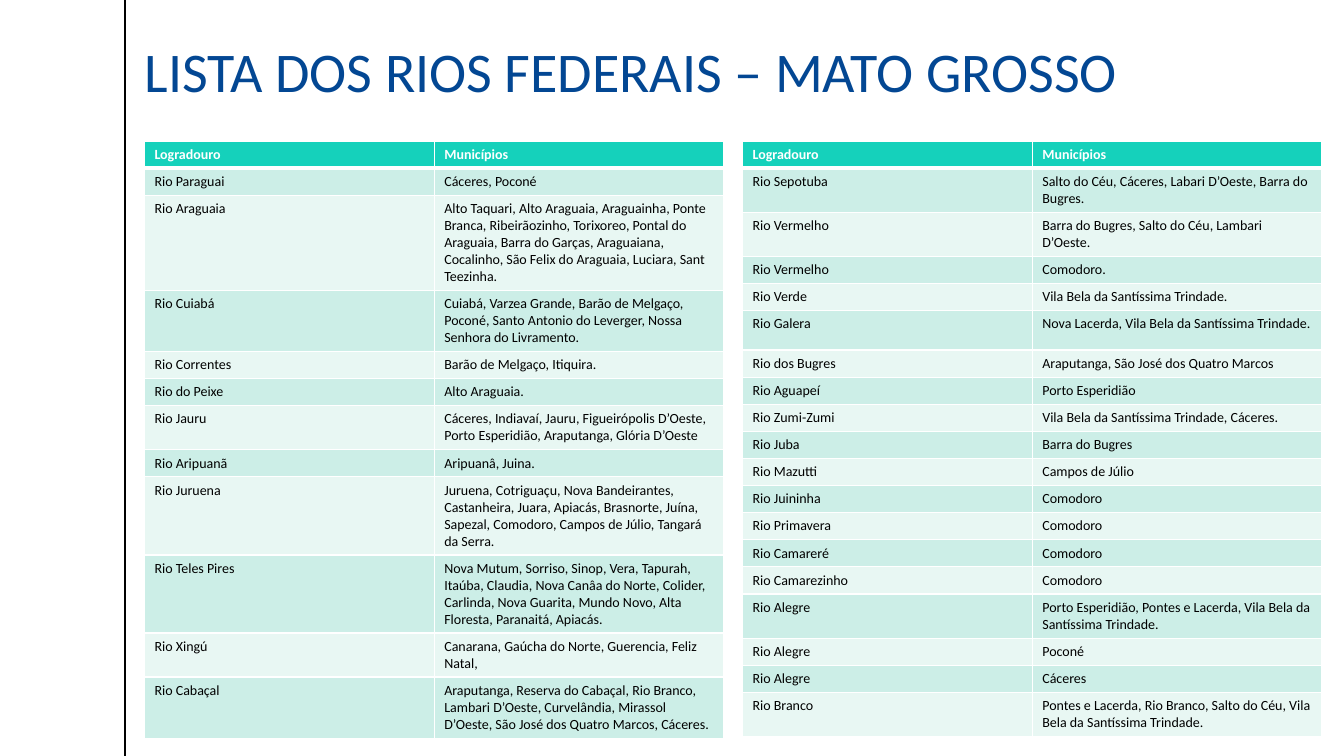
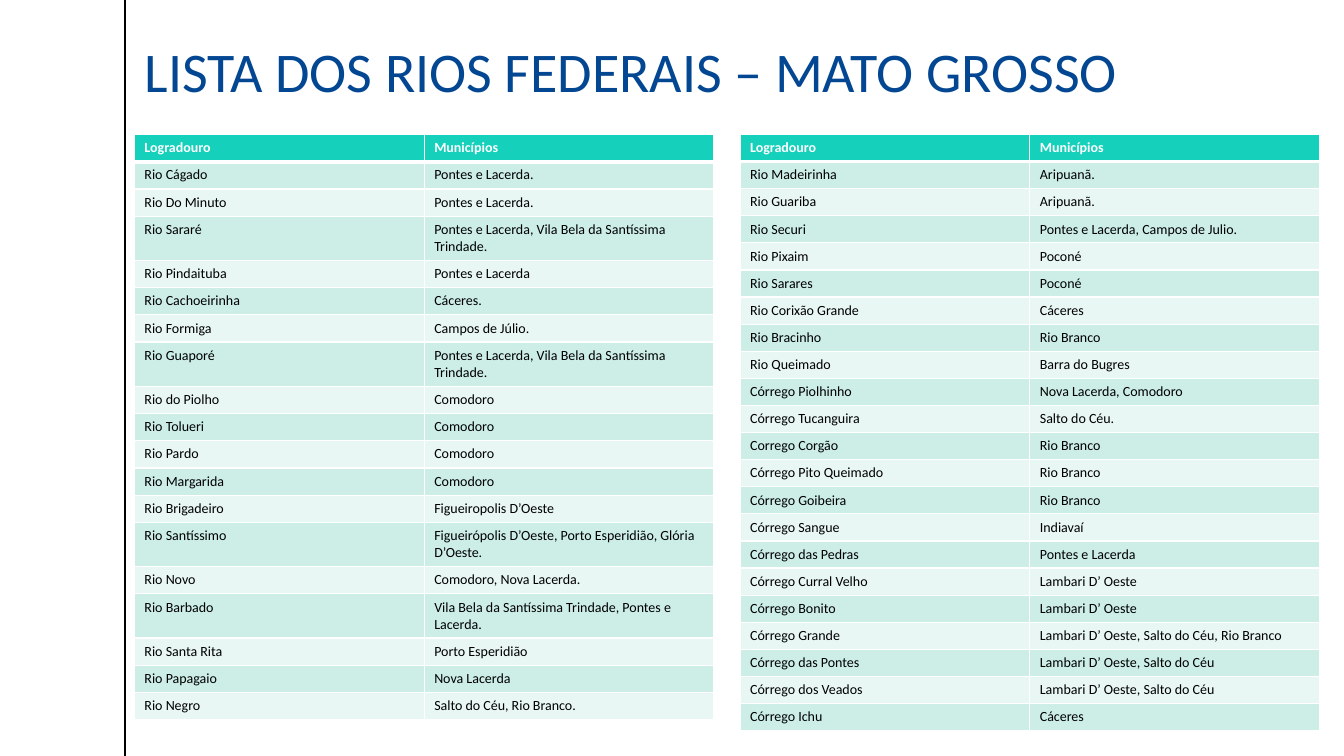
from dataclasses import dataclass
from typing import NamedTuple

from lxml import etree
from pptx import Presentation
from pptx.dml.color import RGBColor
from pptx.enum.shapes import MSO_CONNECTOR
from pptx.enum.text import MSO_ANCHOR, MSO_AUTO_SIZE, PP_ALIGN
from pptx.oxml.ns import qn
from pptx.util import Emu, Inches, Pt

STRAIGHT = MSO_CONNECTOR.STRAIGHT
MIDDLE = MSO_ANCHOR.MIDDLE
NO_FIT = MSO_AUTO_SIZE.NONE
LEFT = PP_ALIGN.LEFT

# Shared look: the slide is a grid of 160 columns by 90 rows
GRID_COLUMNS, GRID_ROWS = 160, 90
CELL = Inches(7.5) / GRID_ROWS
FONT = "Calibri"
COLORS = {
    "title": "034793",
    "header": "15D1BB",
    "odd": "CCEEE7",
    "even": "E8F7F3",
    "text": "000000",
    "white": "FFFFFF",
}
TITLE = "LISTA DOS RIOS FEDERAIS – MATO GROSSO"
HEADINGS = ("Logradouro", "Municípios")
COLUMN_WIDTH = 34.5
THIN, THICK = 1, 3


class River(NamedTuple):
    name: str
    towns: str
    height: float = 0


@dataclass
class RiverTable:
    column: float
    row: float
    rivers: list[River]
    row_height: float = 3.22


def grid(count: float) -> Emu:
    return Emu(round(count * CELL))


def color(name: str) -> RGBColor:
    return RGBColor.from_string(COLORS[name])


# Content
SLIDES = [
    [
        RiverTable(17.2, 16.8, [
            River("Rio Paraguai", "Cáceres, Poconé"),
            River("Rio Araguaia", "Alto Taquari, Alto Araguaia, Araguainha, Ponte Branca, "
                  "Ribeirãozinho, Torixoreo, Pontal do Araguaia, Barra do Garças, Araguaiana, "
                  "Cocalinho, São Felix do Araguaia, Luciara, Sant Teezinha."),
            River("Rio Cuiabá", "Cuiabá, Varzea Grande, Barão de Melgaço, Poconé, "
                  "Santo Antonio do Leverger, Nossa Senhora do Livramento."),
            River("Rio Correntes", "Barão de Melgaço, Itiquira."),
            River("Rio do Peixe", "Alto Araguaia."),
            River("Rio Jauru", "Cáceres, Indiavaí, Jauru, Figueirópolis D’Oeste, "
                  "Porto Esperidião, Araputanga, Glória D’Oeste"),
            River("Rio Aripuanã", "Aripuanâ, Juina."),
            River("Rio Juruena", "Juruena, Cotriguaçu, Nova Bandeirantes, Castanheira, Juara, "
                  "Apiacás, Brasnorte, Juína, Sapezal, Comodoro, Campos de Júlio, "
                  "Tangará da Serra."),
            River("Rio Teles Pires", "Nova Mutum, Sorriso, Sinop, Vera, Tapurah, Itaúba, "
                  "Claudia, Nova Canâa do Norte, Colider, Carlinda, Nova Guarita, Mundo Novo, "
                  "Alta Floresta, Paranaitá, Apiacás."),
            River("Rio Xingú", "Canarana, Gaúcha do Norte, Guerencia, Feliz Natal,"),
            River("Rio Cabaçal", "Araputanga, Reserva do Cabaçal, Rio Branco, "
                  "Lambari D’Oeste, Curvelândia, Mirassol D’Oeste, "
                  "São José dos Quatro Marcos, Cáceres."),
        ]),
        RiverTable(88.4, 16.8, [
            River("Rio Sepotuba", "Salto do Céu, Cáceres, Labari D’Oeste, Barra do Bugres."),
            River("Rio Vermelho", "Barra do Bugres, Salto do Céu, Lambari D’Oeste."),
            River("Rio Vermelho", "Comodoro."),
            River("Rio Verde", "Vila Bela da Santíssima Trindade."),
            River("Rio Galera", "Nova Lacerda, Vila Bela da Santíssima Trindade.", 4.7),
            River("Rio dos Bugres", "Araputanga, São José dos Quatro Marcos"),
            River("Rio Aguapeí", "Porto Esperidião"),
            River("Rio Zumi-Zumi", "Vila Bela da Santíssima Trindade, Cáceres."),
            River("Rio Juba", "Barra do Bugres"),
            River("Rio Mazutti", "Campos de Júlio"),
            River("Rio Juininha", "Comodoro"),
            River("Rio Primavera", "Comodoro"),
            River("Rio Camareré", "Comodoro"),
            River("Rio Camarezinho", "Comodoro"),
            River("Rio Alegre", "Porto Esperidião, Pontes e Lacerda, "
                  "Vila Bela da Santíssima Trindade."),
            River("Rio Alegre", "Poconé"),
            River("Rio Alegre", "Cáceres"),
            River("Rio Branco", "Pontes e Lacerda, Rio Branco, Salto do Céu, "
                  "Vila Bela da Santíssima Trindade."),
        ]),
    ],
    [
        RiverTable(16, 16, [
            River("Rio Cágado", "Pontes e Lacerda."),
            River("Rio Do Minuto", "Pontes e Lacerda."),
            River("Rio Sararé", "Pontes e Lacerda, Vila Bela da Santíssima Trindade."),
            River("Rio Pindaituba", "Pontes e Lacerda"),
            River("Rio Cachoeirinha", "Cáceres."),
            River("Rio Formiga", "Campos de Júlio."),
            River("Rio Guaporé", "Pontes e Lacerda, Vila Bela da Santíssima Trindade."),
            River("Rio do Piolho", "Comodoro"),
            River("Rio Tolueri", "Comodoro"),
            River("Rio Pardo", "Comodoro"),
            River("Rio Margarida", "Comodoro"),
            River("Rio Brigadeiro", "Figueiropolis D’Oeste"),
            River("Rio Santíssimo", "Figueirópolis D’Oeste, Porto Esperidião, Glória D’Oeste."),
            River("Rio Novo", "Comodoro, Nova Lacerda."),
            River("Rio Barbado", "Vila Bela da Santíssima Trindade, Pontes e Lacerda."),
            River("Rio Santa Rita", "Porto Esperidião"),
            River("Rio Papagaio", "Nova Lacerda"),
            River("Rio Negro", "Salto do Céu, Rio Branco."),
        ], row_height=3.25),
        RiverTable(88.1, 16, [
            River("Rio Madeirinha", "Aripuanã."),
            River("Rio Guariba", "Aripuanã."),
            River("Rio Securi", "Pontes e Lacerda, Campos de Julio."),
            River("Rio Pixaim", "Poconé"),
            River("Rio Sarares", "Poconé"),
            River("Rio Corixão Grande", "Cáceres"),
            River("Rio Bracinho", "Rio Branco"),
            River("Rio Queimado", "Barra do Bugres"),
            River("Córrego Piolhinho", "Nova Lacerda, Comodoro"),
            River("Córrego Tucanguira", "Salto do Céu."),
            River("Corrego Corgão", "Rio Branco"),
            River("Córrego Pito Queimado", "Rio Branco"),
            River("Córrego Goibeira", "Rio Branco"),
            River("Córrego Sangue", "Indiavaí"),
            River("Córrego das Pedras", "Pontes e Lacerda"),
            River("Córrego Curral Velho", "Lambari D’ Oeste"),
            River("Córrego Bonito", "Lambari D’ Oeste"),
            River("Córrego Grande", "Lambari D’ Oeste, Salto do Céu, Rio Branco"),
            River("Córrego das Pontes", "Lambari D’ Oeste, Salto do Céu"),
            River("Córrego dos Veados", "Lambari D’ Oeste, Salto do Céu"),
            River("Córrego Ichu", "Cáceres"),
        ]),
    ],
]


def add_span(para, text: str, size: float, color_name: str, bold: bool = False) -> None:
    span = para.add_run()
    span.text = text
    span.font.name = FONT
    span.font.size = Pt(size)
    span.font.bold = bold
    span.font.color.rgb = color(color_name)


def add_margin_line(page) -> None:
    line = page.shapes.add_connector(STRAIGHT, grid(14.9), 0, grid(14.9), grid(GRID_ROWS))
    line.line.color.rgb = color("text")
    line.line.width = Pt(1)
    etree.SubElement(line._element.spPr, qn("a:effectLst"))
    # The line belongs to the layout, so that every slide shows it
    page.slide_layout.shapes.element.append(line._element)


def add_title(page) -> None:
    box = page.shapes.title
    box.left, box.top, box.width, box.height = map(grid, (16, 0.12, 138, 17.4))
    frame = box.text_frame
    frame.vertical_anchor = MIDDLE
    frame.auto_size = NO_FIT
    para = frame.paragraphs[0]
    para.alignment = LEFT
    para.line_spacing = 0.9
    add_span(para, TITLE, 40, "title")


def set_borders(cell, top: float, bottom: float) -> None:
    """Draw white edges; they go before the fill in the cell properties."""
    properties = cell._tc.get_or_add_tcPr()
    edges = {"lnL": THIN, "lnR": THIN, "lnT": top, "lnB": bottom}
    for place, (tag, width) in enumerate(edges.items()):
        edge = etree.Element(qn(f"a:{tag}"), w=str(Pt(width)))
        fill = etree.SubElement(edge, qn("a:solidFill"))
        etree.SubElement(fill, qn("a:srgbClr"), val=COLORS["white"])
        properties.insert(place, edge)


def add_river_table(page, listing: RiverTable) -> None:
    rows = [River(*HEADINGS), *listing.rivers]
    heights = [river.height or listing.row_height for river in rows]
    frame = page.shapes.add_table(
        len(rows), len(HEADINGS), grid(listing.column), grid(listing.row),
        grid(COLUMN_WIDTH * len(HEADINGS)), grid(sum(heights)))
    table = frame.table
    for column in table.columns:
        column.width = grid(COLUMN_WIDTH)
    for index, (river, height) in enumerate(zip(rows, heights)):
        table.rows[index].height = grid(height)
        is_header = index == 0
        fill_name = "header" if is_header else ("even", "odd")[index % 2]
        for cell, text in zip(table.rows[index].cells, (river.name, river.towns)):
            cell.fill.solid()
            cell.fill.fore_color.rgb = color(fill_name)
            set_borders(cell, THICK if index == 1 else THIN, THICK if is_header else THIN)
            add_span(cell.text_frame.paragraphs[0], text, 10,
                     "white" if is_header else "text", is_header)


def main() -> None:
    deck = Presentation()
    deck.slide_width, deck.slide_height = grid(GRID_COLUMNS), grid(GRID_ROWS)
    layout = deck.slide_layouts.get_by_name("Title Only")
    for number, listings in enumerate(SLIDES):
        page = deck.slides.add_slide(layout)
        if number == 0:
            add_margin_line(page)
        add_title(page)
        for listing in listings:
            add_river_table(page, listing)
    deck.save("out.pptx")


if __name__ == "__main__":
    main()
